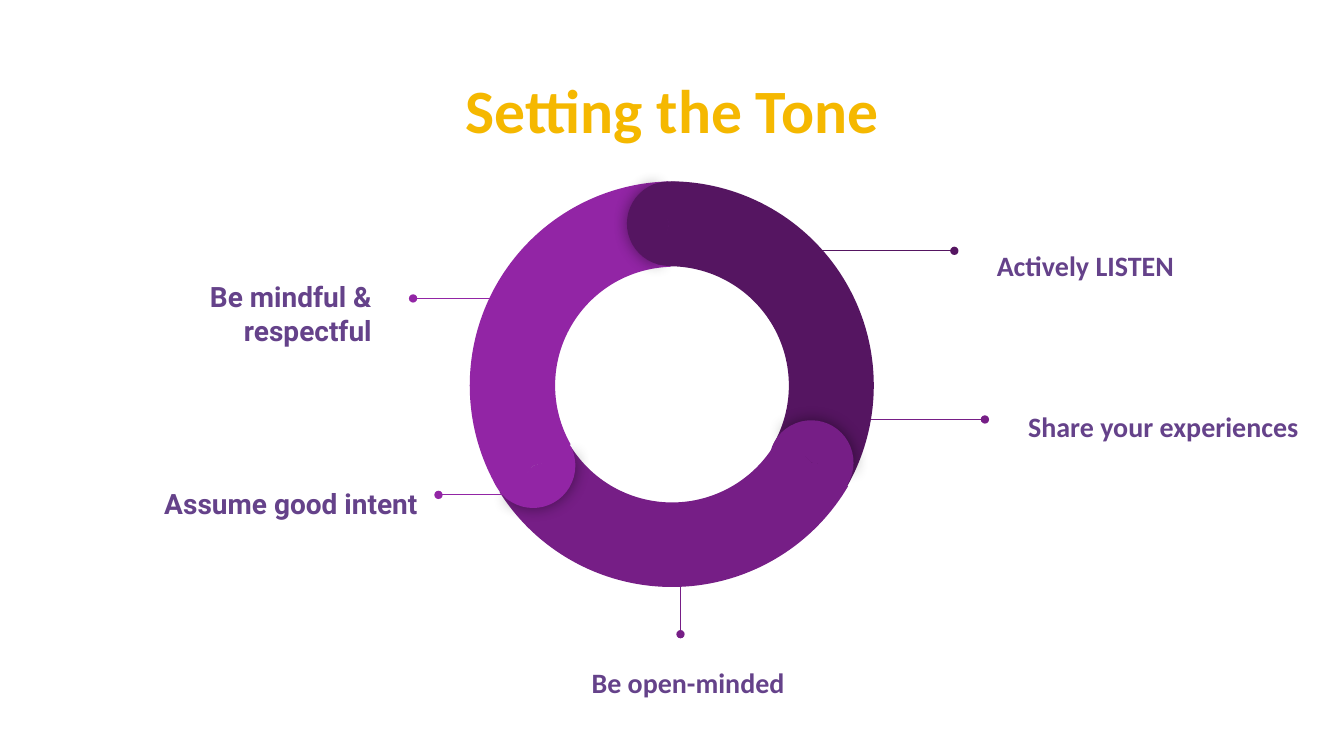
from lxml import etree
from pptx import Presentation
from pptx import util as u
from pptx.dml.color import RGBColor
from pptx.enum import shapes, text
from pptx.oxml import ns

HUES = {
    "gold": "F5B800",
    "label": "65428A",
    "dark": "551561",
    "mid": "761E86",
    "light": "9225A5",
    "black": "000000",
}
LEFT, MID, RIGHT = text.PP_ALIGN.LEFT, text.PP_ALIGN.CENTER, text.PP_ALIGN.RIGHT

# Sizes in cm
LABEL = (7.87, 4.78)
RING = 10.29
CAP = 2.13

# Label text, font, align, label corner, line start, line end, hue
NOTES = [
    ("Be mindful & respectful", "Roboto", RIGHT, (1.83, 5.51),
     (12.75, 7.52), (10.41, 7.52), "light"),
    ("Actively LISTEN", "Calibri", LEFT, (24.79, 4.3),
     (19.3, 6.32), (24.05, 6.32), "dark"),
    ("Share your experiences", "Calibri", LEFT, (25.58, 8.36),
     (20.07, 10.57), (24.82, 10.57), "mid"),
    ("Assume good intent", "Roboto", LEFT, (3.81, 10.29),
     (13.41, 12.47), (11.05, 12.47), "light"),
    ("Be open-minded", "Calibri", LEFT, (14.58, 14.81),
     (17.15, 13.31), (17.15, 15.98), "mid"),
]

# Hue, corner, turn, end angle and width of each arc
ARCS = [
    ("dark", (11.73, 4.57), 60, 197.82, 0.208),
    ("mid", (11.79, 4.5), 180, 196.63, 0.207),
    ("light", (11.84, 4.57), 300, 197.03, 0.209),
]

# Hue, corner and turn of each round cap
CAPS = [
    ("light", (12.37, 10.67), 240),
    ("dark", (15.8, 4.57), 0),
    ("mid", (19.38, 10.59), 120),
]


def hue(name):
    return RGBColor.from_string(HUES[name])


def add_text(slide, words, spot, size, font, points, tint, align, inset=None):
    box = slide.shapes.add_textbox(*map(u.Cm, spot + size))
    frame = box.text_frame
    frame.word_wrap = True
    frame.vertical_anchor = text.MSO_ANCHOR.MIDDLE
    if inset:
        frame.margin_left = frame.margin_right = u.Cm(inset)
        frame.margin_top = frame.margin_bottom = u.Cm(inset)
    frame.text = words
    para = frame.paragraphs[0]
    para.alignment = align
    style = para.runs[0].font
    style.name, style.size, style.bold = font, u.Pt(points), True
    style.color.rgb = hue(tint)
    return para


def add_line(slide, start, end, tint):
    line = slide.shapes.add_connector(
        shapes.MSO_CONNECTOR.STRAIGHT, *map(u.Cm, start + end))
    line.line.color.rgb = hue(tint)
    line.line.width = u.Pt(0.75)
    props = line._element.spPr
    etree.SubElement(props.find(ns.qn("a:ln")), ns.qn("a:tailEnd"), type="oval")
    etree.SubElement(props, ns.qn("a:effectLst"))


def add_note(slide, words, font, align, spot, start, end, tint):
    add_text(slide, words, spot, LABEL, font, 20, "label", align, 0.33)
    add_line(slide, start, end, tint)


def add_part(slide, kind, spot, size, turn, tint, angles):
    part = slide.shapes.add_shape(kind, *map(u.Cm, spot + (size, size)))
    for i, value in enumerate(angles):
        part.adjustments[i] = value
    part.rotation = turn
    part.fill.solid()
    part.fill.fore_color.rgb = hue(tint)
    part.line.fill.background()
    part.shadow.inherit = False
    return part


def add_glow(part):
    effects = part._element.spPr.find(ns.qn("a:effectLst"))
    glow = etree.SubElement(effects, ns.qn("a:outerShdw"),
                            blurRad=str(u.Pt(11.2)), dist="0", dir="0",
                            algn="ctr", rotWithShape="0")
    shade = etree.SubElement(glow, ns.qn("a:srgbClr"), val=HUES["black"])
    etree.SubElement(shade, ns.qn("a:alpha"), val="43000")


def add_ring(slide):
    for tint, spot, turn, end, width in ARCS:
        add_part(slide, shapes.MSO_SHAPE.BLOCK_ARC, spot, RING, turn, tint,
                 (126.23, end, width))
    # Each cap is a shaded front half and a plain back half
    pie = shapes.MSO_SHAPE.PIE
    for tint, spot, turn in CAPS:
        add_glow(add_part(slide, pie, spot, CAP, turn + 0.7, tint,
                          (61.9, 149.96)))
        add_part(slide, pie, spot, CAP, (turn + 180) % 360, tint,
                 (40.28, 171.84))


def main():
    deck = Presentation()
    deck.slide_width, deck.slide_height = u.Cm(33.87), u.Cm(19.05)
    slide = deck.slides.add_slide(deck.slide_layouts[6])

    # Title
    title = add_text(slide, "Setting the Tone", (2.34, 1.02), (29.21, 3.68),
                     "Calibri", 44, "gold", MID)
    title.line_spacing = 0.9

    # Ring between the back and front notes
    for note in NOTES[:3]:
        add_note(slide, *note)
    add_ring(slide)
    for note in NOTES[3:]:
        add_note(slide, *note)

    deck.save("out.pptx")


if __name__ == "__main__":
    main()
